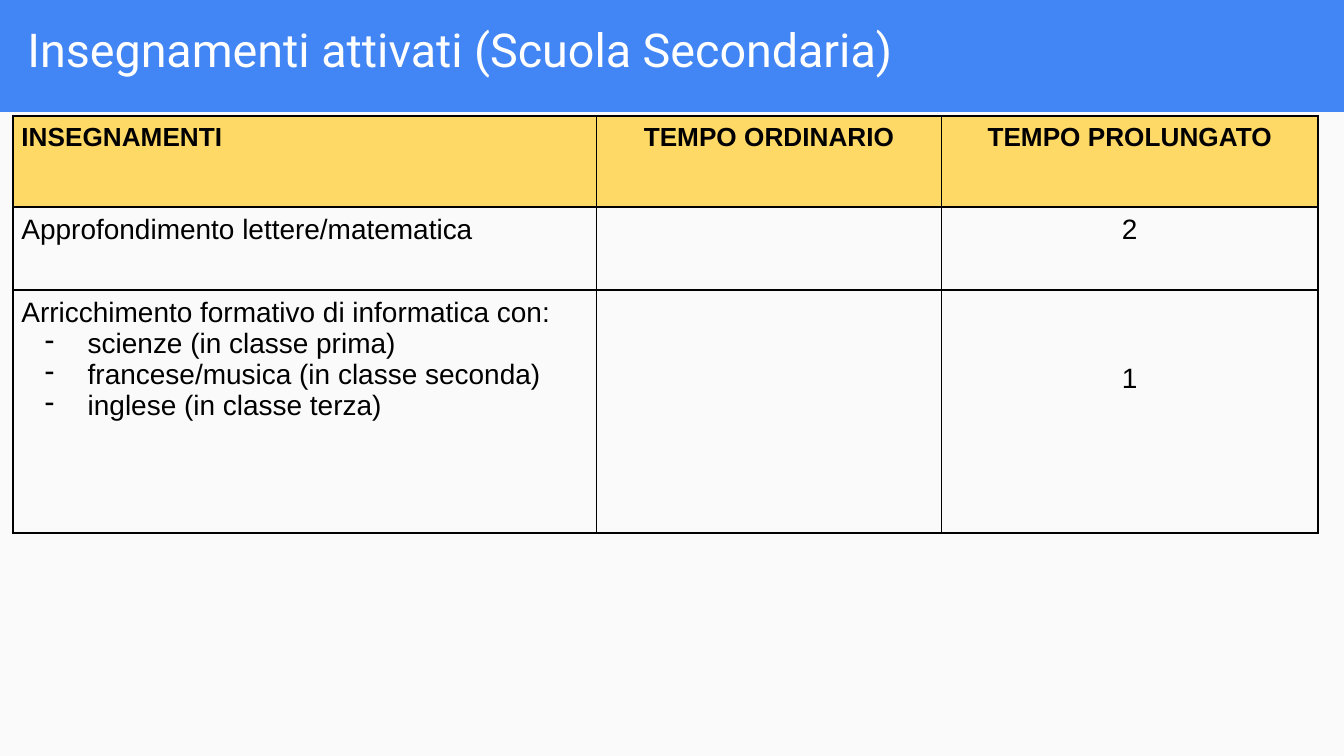
from pptx import Presentation
from pptx.dml.color import RGBColor
from pptx.enum.shapes import MSO_SHAPE
from pptx.enum.text import PP_ALIGN
from pptx.oxml.ns import qn
from pptx.util import Pt
from lxml.etree import SubElement

BLUE, PAPER, GOLD = "4285F4", "FAFAFA", "FFD966"
BLACK, WHITE = "000000", "FFFFFF"
WIDTH, HEIGHT, BAND = 720, 405, 60


def color(value):
    """Turn a hex string into a colour."""
    return RGBColor.from_string(value)


def write(p, text, size=15, font="Arial", fill=BLACK, bold=False,
          align=PP_ALIGN.LEFT, left=0, bullet=None, hang=23):
    """Fill a paragraph with one formatted run."""
    p.alignment = align
    pPr = p._p.get_or_add_pPr()
    pPr.set("marL", str(Pt(left)))
    pPr.set("indent", str(Pt(-hang if bullet else 0)))
    if bullet:
        SubElement(pPr, qn("a:buChar")).set("char", bullet)
    r = p.add_run()
    r.text = text
    r.font.size, r.font.name, r.font.bold = Pt(size), font, bold
    r.font.color.rgb = color(fill)


class Deck:
    """Hold the style and the current slide."""

    def __init__(self):
        """Start a deck with one blank slide."""
        self.prs = Presentation()
        self.prs.slide_width, self.prs.slide_height = Pt(WIDTH), Pt(HEIGHT)
        self.s = self.prs.slides.add_slide(self.prs.slide_layouts[6])

    def panel(self, x, y, w, h, fill):
        """Draw a plain filled rectangle."""
        sp = self.s.shapes.add_shape(MSO_SHAPE.RECTANGLE, Pt(x), Pt(y), Pt(w), Pt(h))
        sp.shadow.inherit = False
        sp.fill.solid()
        sp.fill.fore_color.rgb = color(fill)
        sp.line.fill.background()

    def title(self, text, x, y, w, h):
        """Add the slide title."""
        tf = self.s.shapes.add_textbox(Pt(x), Pt(y), Pt(w), Pt(h)).text_frame
        tf.word_wrap = True
        tf.margin_left = tf.margin_right = tf.margin_bottom = 0
        tf.margin_top = Pt(3)
        write(tf.paragraphs[0], text, size=25, font="Roboto", fill=WHITE, left=0.7)

    def cell(self, cell, lines, fill, top=3.6):
        """Fill, outline and write one table cell."""
        cell.margin_left = cell.margin_right = cell.margin_bottom = 0
        cell.margin_top = Pt(top)
        tcPr = cell._tc.get_or_add_tcPr()
        for side in ("L", "R", "T", "B"):
            ln = SubElement(tcPr, qn(f"a:ln{side}"), w=str(Pt(1)))
            SubElement(SubElement(ln, qn("a:solidFill")), qn("a:srgbClr"), val=BLACK)
        cell.fill.solid()
        cell.fill.fore_color.rgb = color(fill)
        tf = cell.text_frame
        for i, (text, style) in enumerate(lines):
            write(tf.add_paragraph() if i else tf.paragraphs[0], text, **style)

    def table(self, x, y, widths, heights, rows):
        """Add a table whose first row is the header."""
        t = self.s.shapes.add_table(len(rows), len(widths), Pt(x), Pt(y),
                                    Pt(sum(widths)), Pt(sum(heights))).table
        t.horz_banding = False
        for column, w in zip(t.columns, widths):
            column.width = Pt(w)
        for i, (h, row) in enumerate(zip(heights, rows)):
            t.rows[i].height = Pt(h)
            for j, (lines, *top) in enumerate(row):
                self.cell(t.cell(i, j), lines, PAPER if i else GOLD, *top)


def main():
    """Build and save the slide."""
    deck = Deck()
    deck.panel(0, 0, WIDTH, HEIGHT, BLUE)
    deck.panel(0, BAND, WIDTH, HEIGHT - BAND, PAPER)
    deck.title("Insegnamenti attivati (Scuola Secondaria)", 14, 8, 591, 32)

    label = {"left": 4.5}
    item = {"left": 40, "bullet": "-"}
    value = {"align": PP_ALIGN.CENTER}
    head = {"size": 14, "bold": True}
    subjects = ["scienze (in classe prima)", "francese/musica (in classe seconda)",
                "inglese (in classe terza)"]
    rows = [
        [([("INSEGNAMENTI", head | label)],),
         ([("TEMPO ORDINARIO", head | value)],),
         ([("TEMPO PROLUNGATO", head | value)],)],
        [([("Approfondimento lettere/matematica", label)],),
         ([],),
         ([("2", value)],)],
        [([("Arricchimento formativo di informatica con:", label)]
          + [(subject, item) for subject in subjects],),
         ([],),
         ([("1", value)], 39)],
    ]
    deck.table(7, 62, [312.5, 185, 201.5], [49, 44.5, 130], rows)
    deck.prs.save("out.pptx")


if __name__ == "__main__":
    main()
